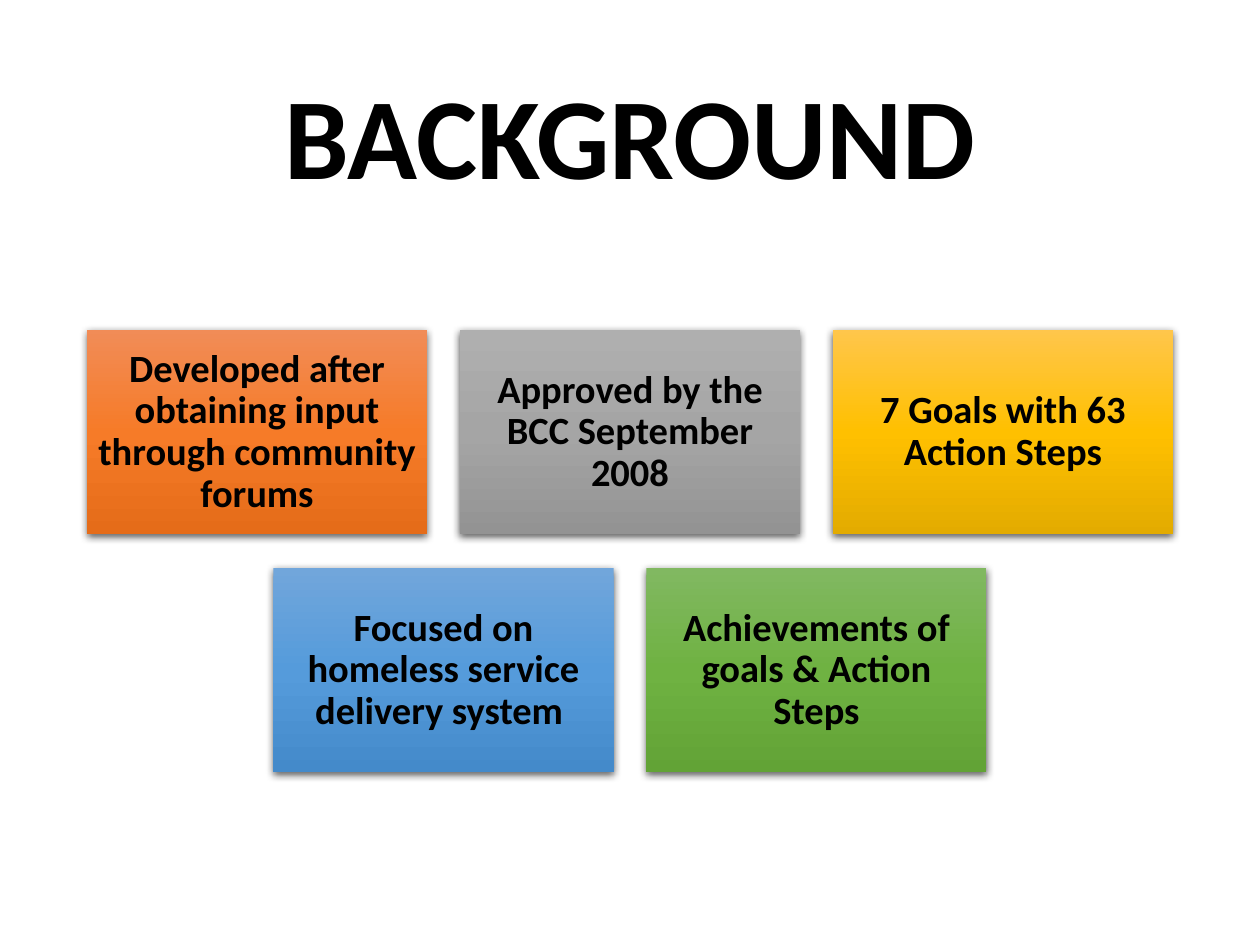
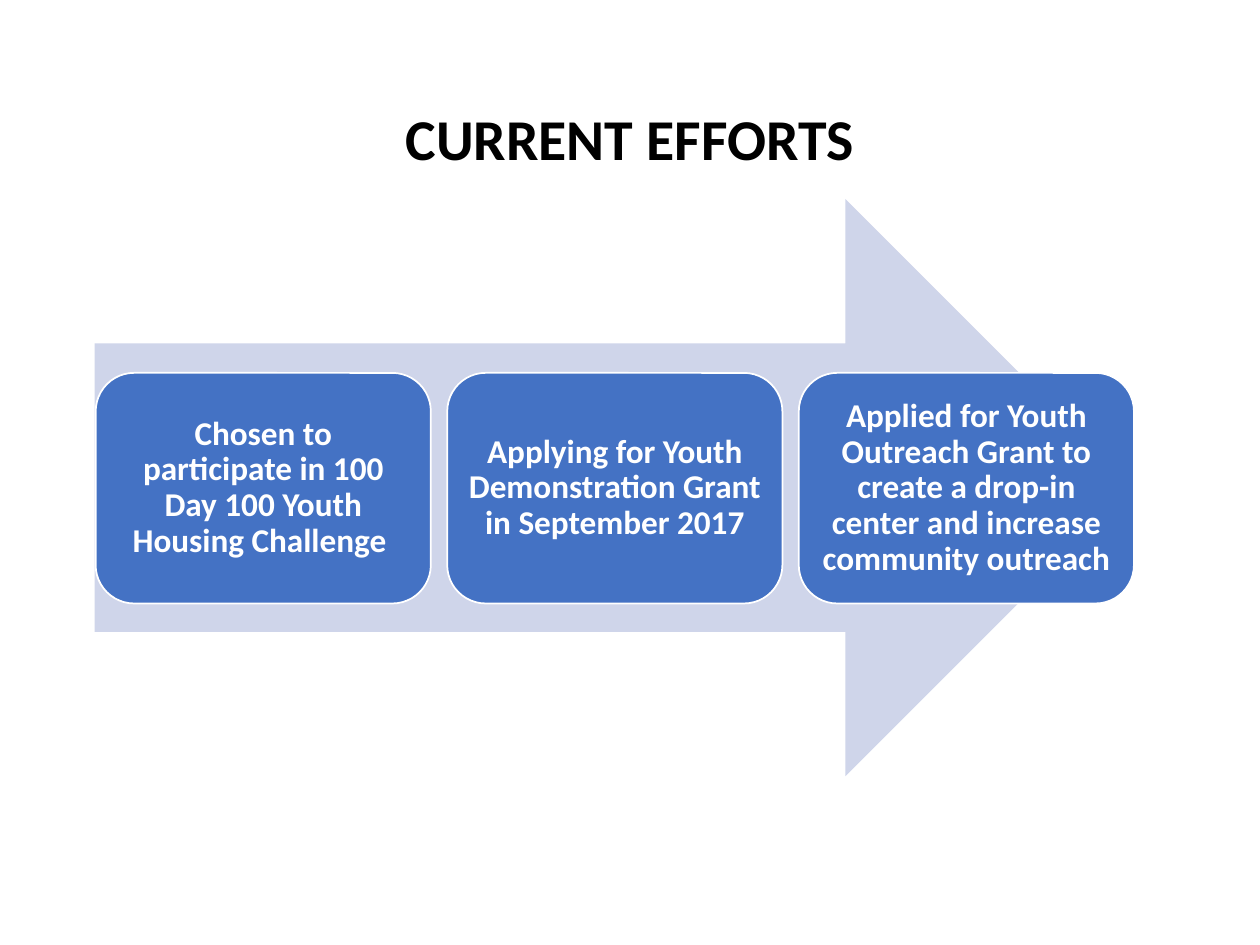
"""Build two slides: the background boxes and the current efforts arrow."""
from copy import deepcopy
from dataclasses import dataclass

from lxml import etree
from pptx import Presentation
from pptx.dml.color import RGBColor
from pptx.enum.shapes import MSO_SHAPE
from pptx.enum.text import MSO_ANCHOR, PP_ALIGN
from pptx.oxml.ns import qn
from pptx.util import Inches, Pt

RECTANGLE = MSO_SHAPE.RECTANGLE
ROUNDED = MSO_SHAPE.ROUNDED_RECTANGLE
RIGHT_ARROW = MSO_SHAPE.RIGHT_ARROW
MIDDLE = MSO_ANCHOR.MIDDLE
CENTER = PP_ALIGN.CENTER


@dataclass(frozen=True)
class Theme:
    """Hold the colours, font and type sizes of the deck."""
    font: str = "Calibri"
    ink: str = "000000"
    paper: str = "FFFFFF"
    arrow: str = "CFD5EA"
    step: str = "4472C4"
    orange: tuple = ("F18C57", "F67B28", "E56C19")
    gray: tuple = ("AFAFAF", "A5A5A5", "939393")
    gold: tuple = ("FFC64B", "FFC000", "E3AB00")
    blue: tuple = ("71A6DB", "559BDB", "448ACA")
    green: tuple = ("81B861", "6FB242", "62A336")
    large_title: int = 66
    small_title: int = 33
    fact_size: int = 22
    step_size: int = 19


class SlideBuilder:
    """Draw styled elements on the current slide."""

    def __init__(self, deck, theme):
        """Keep the deck and its theme."""
        self.deck = deck
        self.theme = theme
        self.page = None

    def new_page(self, title, size):
        """Start a blank slide with a centred title."""
        self.page = self.deck.slides.add_slide(self.deck.slide_layouts[6])
        box = self.page.shapes.add_textbox(
            Inches(0.69), Inches(0.4), Inches(8.62), Inches(1.45))
        self.add_text(box, title, size, self.theme.ink, 0.1)

    def add_text(self, box, text, size, color, inset):
        """Put bold centred text in a box."""
        frame = box.text_frame
        frame.word_wrap = True
        frame.vertical_anchor = MIDDLE
        frame.margin_left = frame.margin_right = Inches(inset)
        frame.margin_top = frame.margin_bottom = Inches(inset)
        para = frame.paragraphs[0]
        para.alignment = CENTER
        para.line_spacing = 0.9
        span = para.add_run()
        span.text = text
        span.font.name = self.theme.font
        span.font.size = Pt(size)
        span.font.bold = True
        span.font.color.rgb = RGBColor.from_string(color)

    def shape(self, kind, left, top, width, height):
        """Add a preset shape without line or shadow."""
        shape = self.page.shapes.add_shape(
            kind, Inches(left), Inches(top), Inches(width), Inches(height))
        shape.line.fill.background()
        shape.shadow.inherit = False
        return shape

    def solid(self, kind, color, *place):
        """Add a shape with one fill colour."""
        shape = self.shape(kind, *place)
        shape.fill.solid()
        shape.fill.fore_color.rgb = RGBColor.from_string(color)
        return shape

    def gradient(self, shape, colors):
        """Fill a shape from top to bottom with three colours."""
        shape.fill.gradient()
        shape.fill.gradient_angle = 270
        stop_list = next(shape._element.spPr.iter(qn("a:gsLst")))
        stop_list.append(deepcopy(stop_list[0]))
        for stop, position, color in zip(
                shape.fill.gradient_stops, (0, 0.5, 1), colors):
            stop.position = position
            stop.color.rgb = RGBColor.from_string(color)

    def drop_shadow(self, shape):
        """Cast a soft shadow below a shape."""
        effects = shape._element.spPr.find(qn("a:effectLst"))
        shadow = etree.SubElement(
            effects, qn("a:outerShdw"), blurRad=str(Pt(4.5)),
            dist=str(Pt(1.5)), dir="5400000", algn="ctr", rotWithShape="0")
        color = etree.SubElement(shadow, qn("a:srgbClr"), val=self.theme.ink)
        etree.SubElement(color, qn("a:alpha"), val="63000")

    def fact_row(self, top, facts):
        """Add a centred row of gradient boxes."""
        width, gap = 2.7, 0.26
        pitch = width + gap
        left = 5 - (len(facts) * pitch - gap) / 2
        for column, (text, colors) in enumerate(facts):
            box = self.shape(RECTANGLE, left + column * pitch, top, width, 1.62)
            self.gradient(box, colors)
            self.drop_shadow(box)
            self.add_text(box, text, self.theme.fact_size, self.theme.ink, 0.09)

    def step_row(self, steps):
        """Add evenly spaced rounded steps."""
        for column, text in enumerate(steps):
            box = self.solid(ROUNDED, self.theme.step,
                             0.76 + column * 2.79, 2.96, 2.66, 1.83)
            box.line.color.rgb = RGBColor.from_string(self.theme.paper)
            box.line.width = Pt(1)
            self.add_text(box, text, self.theme.step_size, self.theme.paper, 0.08)


def main():
    """Build and save the deck."""
    deck = Presentation()
    deck.slide_width, deck.slide_height = Inches(10), Inches(7.5)
    theme = Theme()
    builder = SlideBuilder(deck, theme)

    builder.new_page("BACKGROUND", theme.large_title)
    builder.fact_row(2.62, [
        ("Developed after obtaining input through community forums", theme.orange),
        ("Approved by the BCC September 2008", theme.gray),
        ("7 Goals with 63 Action Steps", theme.gold),
    ])
    builder.fact_row(4.51, [
        ("Focused on homeless service delivery system ", theme.blue),
        ("Achievements of goals & Action Steps", theme.green),
    ])

    builder.new_page("CURRENT EFFORTS", theme.small_title)
    builder.solid(RIGHT_ARROW, theme.arrow, 0.75, 1.58, 8.25, 4.58)
    builder.step_row([
        "Chosen to participate in 100 Day 100 Youth Housing Challenge ",
        "Applying for Youth Demonstration Grant in September 2017",
        "Applied for Youth Outreach Grant to create a drop-in center "
        "and increase community outreach",
    ])
    deck.save("out.pptx")


if __name__ == "__main__":
    main()
